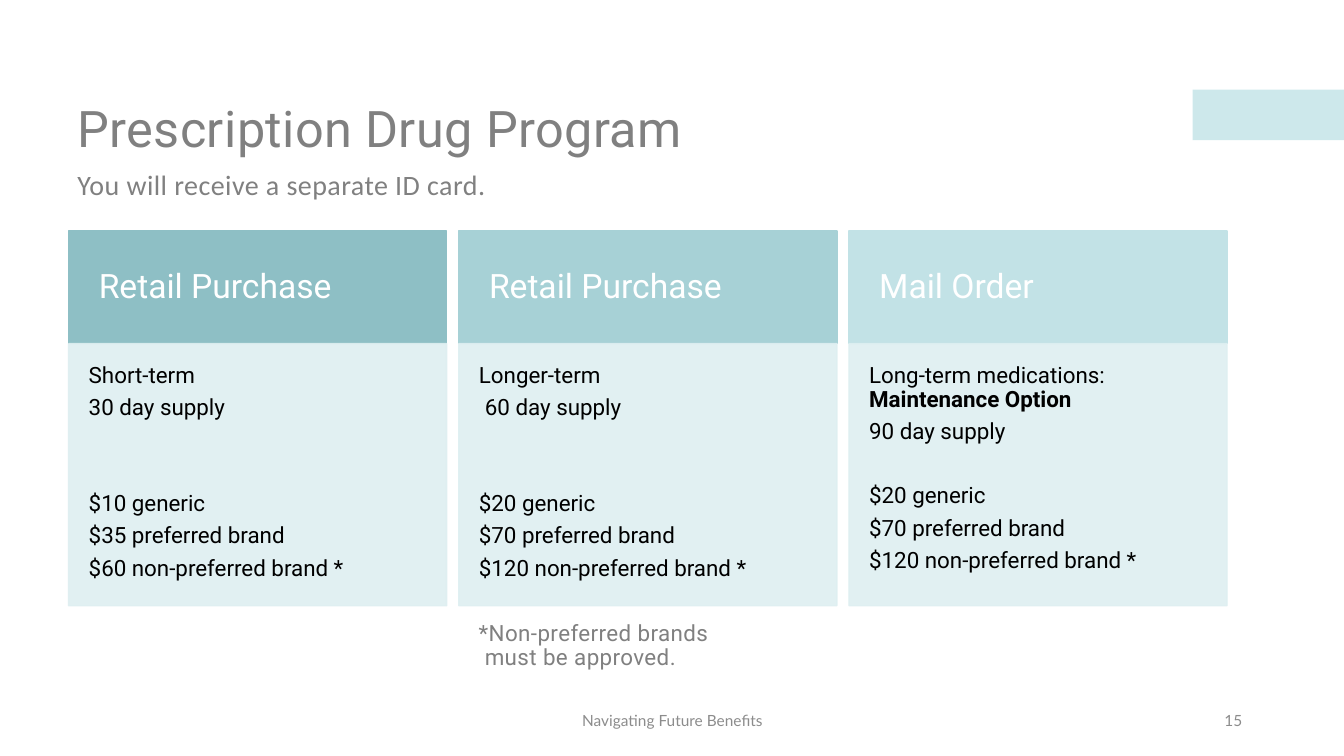
from dataclasses import dataclass

from lxml.etree import SubElement
from pptx import Presentation
from pptx.dml.color import RGBColor
from pptx.dml.fill import FillFormat
from pptx.enum.shapes import MSO_SHAPE as Shape
from pptx.enum.text import MSO_ANCHOR as Anchor, PP_ALIGN as Align
from pptx.oxml.ns import qn
from pptx.shapes.autoshape import Shape as Box
from pptx.slide import Slide
from pptx.util import Emu, Pt

PX = 9144
WHITE = RGBColor(0xFF, 0xFF, 0xFF)
BLACK = RGBColor(0x00, 0x00, 0x00)
GRAY = RGBColor(0x80, 0x80, 0x80)
FOOTER_GRAY = RGBColor(0x8C, 0x8C, 0x8C)
ACCENT = RGBColor(0x9C, 0xD3, 0xD9)
DEEP_TEAL = RGBColor(0x8E, 0xBF, 0xC5)
MID_TEAL = RGBColor(0xA7, 0xD1, 0xD6)
PALE_TEAL = RGBColor(0xC2, 0xE2, 0xE6)
BODY_TINT = RGBColor(0xDE, 0xEF, 0xF1)

COLUMN_LEFT, COLUMN_STEP, COLUMN_WIDTH = 68, 387, 375
HEADER_TOP, HEADER_HEIGHT = 229, 112
BODY_TOP, BODY_HEIGHT = 341, 260
BODY_SPACING, BODY_LINE = 5.8, 22.8


@dataclass(frozen=True)
class Area:
    left: int
    top: int
    width: int
    height: int

    def emu(self) -> list[Emu]:
        return [Emu(value * PX) for value in (self.left, self.top, self.width, self.height)]


@dataclass(frozen=True)
class Style:
    font: str
    size: int
    color: RGBColor
    align: Align = Align.LEFT
    line_spacing: float = 0.9
    space_after: float = 0
    tracking: int = 0


@dataclass(frozen=True)
class Line:
    text: str
    bold_text: str = ""
    skipped_lines: int = 0
    indent: int = 0


@dataclass(frozen=True)
class Label:
    area: Area
    style: Style
    lines: tuple[Line, ...]


@dataclass(frozen=True)
class Plan:
    title: str
    color: RGBColor
    lines: tuple[Line, ...]


HEADER = Style("Roboto", 24, WHITE)
BODY = Style("Roboto", 16, BLACK, space_after=BODY_SPACING)
TITLE = Style("Roboto", 36, GRAY, tracking=30)
SUBTITLE = Style("Calibri", 20, GRAY, tracking=30)
NOTE = Style("Roboto", 16, GRAY, tracking=30)
FOOTER = Style("Lato", 11, FOOTER_GRAY, Align.CENTER, 1.0)
PAGE_NUMBER = Style("Lato", 11, FOOTER_GRAY, Align.RIGHT, 1.0)

LABELS = (
    Label(Area(67, 58, 1233, 145), TITLE, (Line("Prescription Drug Program"),)),
    Label(Area(67, 112, 1233, 145), SUBTITLE, (Line("You will receive a separate ID card."),)),
    Label(Area(465, 569, 1233, 145), NOTE,
          (Line("*Non-preferred brands"), Line("must be approved.", indent=6))),
    Label(Area(442, 695, 450, 40), FOOTER, (Line("Navigating Future Benefits"),)),
    Label(Area(942, 695, 300, 40), PAGE_NUMBER, (Line("15"),)),
)

PLANS = (
    Plan("Retail Purchase", DEEP_TEAL, (
        Line("Short-term"),
        Line("30 day supply"),
        Line("$10 generic", skipped_lines=2),
        Line("$35 preferred brand"),
        Line("$60 non-preferred brand *"),
    )),
    Plan("Retail Purchase", MID_TEAL, (
        Line("Longer-term"),
        Line("60 day supply", indent=6),
        Line("$20 generic", skipped_lines=2),
        Line("$70 preferred brand"),
        Line("$120 non-preferred brand *"),
    )),
    Plan("Mail Order", PALE_TEAL, (
        Line("Long-term medications: ", "Maintenance Option"),
        Line("90 day supply"),
        Line("$20 generic", skipped_lines=1),
        Line("$70 preferred brand"),
        Line("$120 non-preferred brand *"),
    )),
)


def paint(fill: FillFormat, color: RGBColor) -> None:
    fill.solid()
    fill.fore_color.rgb = color


def add_panel(page: Slide, area: Area, color: RGBColor, opacity: int = 100,
              outlined: bool = True) -> Box:
    box = page.shapes.add_shape(Shape.RECTANGLE, *area.emu())
    box.shadow.inherit = False
    paint(box.fill, color)
    if outlined:
        box.line.width = Pt(1)
        paint(box.line.fill, color)
    else:
        box.line.fill.background()
    if opacity < 100:
        for tint in box._element.spPr.iter(qn("a:srgbClr")):
            SubElement(tint, qn("a:alpha")).set("val", str(opacity * 1000))
    return box


def write(box: Box, lines: tuple[Line, ...], style: Style,
          anchor: Anchor = Anchor.MIDDLE, inset: int = 0) -> None:
    frame = box.text_frame
    frame.word_wrap = True
    frame.vertical_anchor = anchor
    if inset:
        frame.margin_left = frame.margin_right = Emu(inset * PX)
        frame.margin_top = frame.margin_bottom = Emu(inset * PX)
    for index, line in enumerate(lines):
        para = frame.add_paragraph() if index else frame.paragraphs[0]
        para.alignment = style.align
        para.line_spacing = style.line_spacing
        para.space_after = Pt(style.space_after)
        if line.skipped_lines:
            para.space_before = Pt(line.skipped_lines * BODY_LINE)
        if line.indent:
            para._p.get_or_add_pPr().set("marL", str(line.indent * PX))
        para.font.name = style.font
        para.font.size = Pt(style.size)
        para.font.color.rgb = style.color
        for text, bold in ((line.text, False), (line.bold_text, True)):
            if text:
                span = para.add_run()
                span.text = text
                if bold:
                    span.font.bold = True
                if style.tracking:
                    span._r.get_or_add_rPr().set("spc", str(style.tracking))


def add_label(page: Slide, label: Label) -> None:
    write(page.shapes.add_textbox(*label.area.emu()), label.lines, label.style)


def add_plan(page: Slide, plan: Plan, left: int) -> None:
    header = add_panel(page, Area(left, HEADER_TOP, COLUMN_WIDTH, HEADER_HEIGHT), plan.color)
    write(header, (Line(plan.title),), HEADER, inset=30)
    body = add_panel(page, Area(left, BODY_TOP, COLUMN_WIDTH, BODY_HEIGHT), BODY_TINT, 90)
    write(body, plan.lines, BODY, Anchor.TOP, inset=20)


def main() -> None:
    deck = Presentation()
    deck.slide_width, deck.slide_height = Emu(1333 * PX), Emu(750 * PX)
    page = deck.slides.add_slide(deck.slide_layouts[6])
    add_panel(page, Area(1183, 89, 150, 50), ACCENT, 50, outlined=False)
    for index, plan in enumerate(PLANS):
        add_plan(page, plan, COLUMN_LEFT + index * COLUMN_STEP)
    for label in LABELS:
        add_label(page, label)
    deck.save("out.pptx")


if __name__ == "__main__":
    main()
